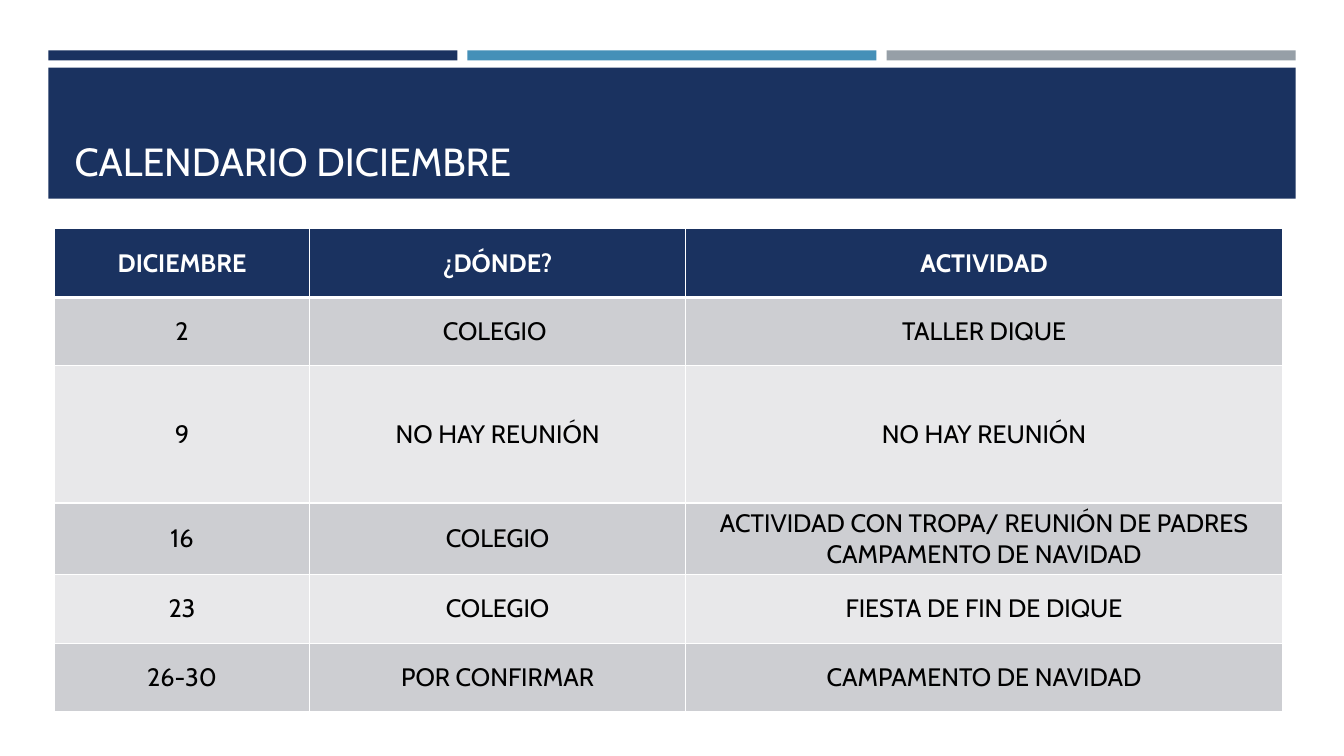
from dataclasses import dataclass

import pptx
import pptx.dml.color
import pptx.enum.shapes
import pptx.enum.text
import pptx.oxml
import pptx.oxml.ns
import pptx.util


@dataclass(frozen=True)
class Theme:
    font: str = "Cabin"
    navy: str = "1A3260"
    blue: str = "4590B8"
    gray: str = "969FA7"
    white: str = "FFFFFF"
    black: str = "000000"
    bands: tuple = ("CDCED2", "E8E8EA")
    title_size: int = 28
    table_size: int = 18
    rule: int = 1
    header_rule: int = 3


THEME = Theme()
WIDTH, HEIGHT = 13.33, 7.5
MARGIN = 0.48
BAR_GAP = 0.1
BAR_WIDTH = (WIDTH - 2 * MARGIN - 2 * BAR_GAP) / 3
TABLE_LEFT, TABLE_TOP = 0.54, 2.27
COLUMNS = (2.53, 3.73, 5.92)
ROW = 0.68
ROW_SPANS = (1, 1, 2, 1, 1, 1)

CALENDAR = (
    ("DICIEMBRE", "¿DÓNDE?", "ACTIVIDAD"),
    ("2", "COLEGIO ", "TALLER DIQUE"),
    ("9", "NO HAY REUNIÓN", "NO HAY REUNIÓN"),
    ("16", "COLEGIO",
     "ACTIVIDAD CON TROPA/ REUNIÓN DE PADRES CAMPAMENTO DE NAVIDAD"),
    ("23", "COLEGIO", "FIESTA DE FIN DE DIQUE"),
    ("26-30", "POR CONFIRMAR", "CAMPAMENTO DE NAVIDAD"),
)


def rgb(color):
    return pptx.dml.color.RGBColor.from_string(color)


def box(*lengths):
    return [pptx.util.Inches(length) for length in lengths]


def format_paragraph(p, size, color, bold=False):
    p.font.name = THEME.font
    p.font.size = pptx.util.Pt(size)
    p.font.bold = bold
    p.font.color.rgb = rgb(color)


def add_block(s, left, top, width, height, color):
    sp = s.shapes.add_shape(pptx.enum.shapes.MSO_SHAPE.RECTANGLE,
                            *box(left, top, width, height))
    sp.shadow.inherit = False
    sp.fill.solid()
    sp.fill.fore_color.rgb = rgb(color)
    sp.line.fill.background()


def add_title(s, text):
    """Fill the title placeholder and bring it in front of the band."""
    sp = s.shapes.title
    sp.left, sp.top, sp.width, sp.height = box(0.64, 0.77, 12.06, 1.11)
    sp.element.getparent().append(sp.element)
    tf = sp.text_frame
    tf.text = text
    tf.word_wrap = True
    tf.vertical_anchor = pptx.enum.text.MSO_ANCHOR.BOTTOM
    p = tf.paragraphs[0]
    p.alignment = pptx.enum.text.PP_ALIGN.LEFT
    format_paragraph(p, THEME.title_size, THEME.white)


def set_borders(cell, top, bottom):
    """Draw the four cell borders; top and bottom are widths in points."""
    tc_pr = cell._tc.get_or_add_tcPr()
    widths = {"L": THEME.rule, "R": THEME.rule, "T": top, "B": bottom}
    for side, width in widths.items():
        tc_pr.append(pptx.oxml.parse_xml(
            f'<a:ln{side} {pptx.oxml.ns.nsdecls("a")} w="{pptx.util.Pt(width)}">'
            f'<a:solidFill><a:srgbClr val="{THEME.white}"/></a:solidFill>'
            f'</a:ln{side}>'))


def format_cell(cell, text, row):
    header = row == 0
    set_borders(cell,
                top=THEME.header_rule if row == 1 else THEME.rule,
                bottom=THEME.header_rule if header else THEME.rule)
    cell.fill.solid()
    cell.fill.fore_color.rgb = rgb(
        THEME.navy if header else THEME.bands[(row - 1) % 2])
    cell.vertical_anchor = pptx.enum.text.MSO_ANCHOR.MIDDLE
    cell.text = text
    p = cell.text_frame.paragraphs[0]
    p.alignment = pptx.enum.text.PP_ALIGN.CENTER
    format_paragraph(p, THEME.table_size,
                     THEME.white if header else THEME.black, bold=header)


def add_calendar(s, rows):
    table = s.shapes.add_table(
        len(rows), len(COLUMNS),
        *box(TABLE_LEFT, TABLE_TOP, sum(COLUMNS), ROW * sum(ROW_SPANS))).table
    for column, width in zip(table.columns, COLUMNS):
        column.width = pptx.util.Inches(width)
    for i, (texts, span) in enumerate(zip(rows, ROW_SPANS)):
        table.rows[i].height = pptx.util.Inches(ROW * span)
        for j, text in enumerate(texts):
            format_cell(table.cell(i, j), text, i)


def main():
    prs = pptx.Presentation()
    prs.slide_width, prs.slide_height = box(WIDTH, HEIGHT)
    s = prs.slides.add_slide(prs.slide_layouts.get_by_name("Title Only"))
    for i, color in enumerate((THEME.navy, THEME.blue, THEME.gray)):
        add_block(s, MARGIN + i * (BAR_WIDTH + BAR_GAP), 0.5,
                  BAR_WIDTH, 0.1, color)
    add_block(s, MARGIN, 0.67, WIDTH - 2 * MARGIN, 1.3, THEME.navy)
    add_title(s, "CALENDARIO DICIEMBRE")
    add_calendar(s, CALENDAR)
    prs.save("out.pptx")


if __name__ == "__main__":
    main()
